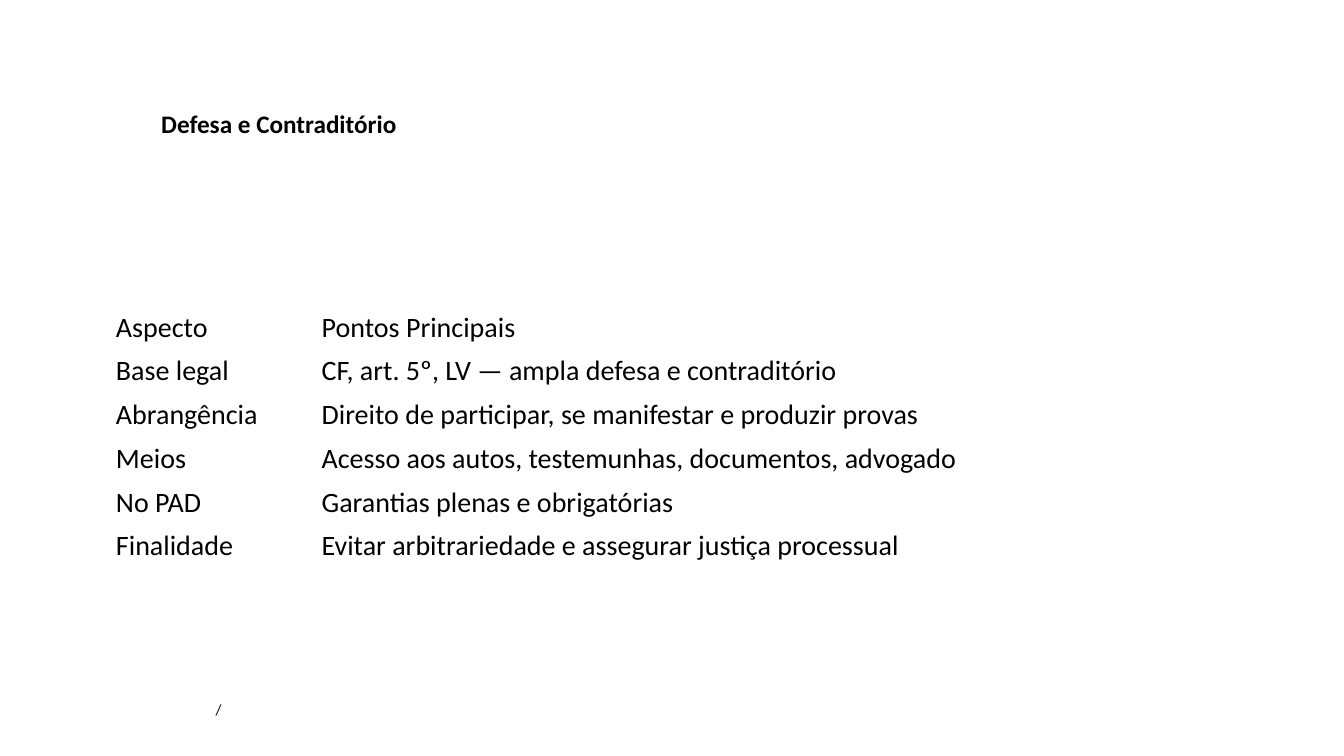
import pptx
import pptx.util
import pptx.dml.color
import pptx.enum.text

Inches = pptx.util.Inches
COLORS = {"text": "000000", "background": "FFFFFF"}

deck = pptx.Presentation()
deck.slide_width = Inches(13.33)
deck.slide_height = Inches(7.5)
page = deck.slides.add_slide(deck.slide_layouts[6])
page.background.fill.solid()
page.background.fill.fore_color.rgb = pptx.dml.color.RGBColor.from_string(COLORS["background"])


def write(frame, text, size, bold=False):
    span = frame.paragraphs[0].add_run()
    span.text = text
    span.font.name = "Calibri"
    span.font.size = pptx.util.Pt(size)
    span.font.bold = bold
    span.font.color.rgb = pptx.dml.color.RGBColor.from_string(COLORS["text"])


labels = [
    ("/", 2.04, 6.9, 9.25, 0.29, 11, False),
    ("Defesa e Contraditório", 1.5, 1.03, 9.79, 0.4, 18, True),
]
for text, left, top, width, height, size, bold in labels:
    box = page.shapes.add_textbox(Inches(left), Inches(top), Inches(width), Inches(height))
    box.text_frame.word_wrap = True
    box.text_frame.auto_size = pptx.enum.text.MSO_AUTO_SIZE.SHAPE_TO_FIT_TEXT
    write(box.text_frame, text, size, bold)

aspects = [
    ("Aspecto", "Pontos Principais"),
    ("Base legal", "CF, art. 5º, LV — ampla defesa e contraditório"),
    ("Abrangência", "Direito de participar, se manifestar e produzir provas"),
    ("Meios", "Acesso aos autos, testemunhas, documentos, advogado"),
    ("No PAD", "Garantias plenas e obrigatórias"),
    ("Finalidade", "Evitar arbitrariedade e assegurar justiça processual"),
]
table = page.shapes.add_table(
    len(aspects), 2, Inches(1.05), Inches(3.03), Inches(11.3), Inches(2.6)
).table
table.first_row = False
table.horz_banding = False
table.columns[0].width = Inches(2.04)
table.columns[1].width = Inches(9.26)

for row, texts in zip(table.rows, aspects):
    for cell, text in zip(row.cells, texts):
        cell.fill.background()
        cell.vertical_anchor = pptx.enum.text.MSO_ANCHOR.MIDDLE
        write(cell.text_frame, text, 20)

deck.save("out.pptx")
